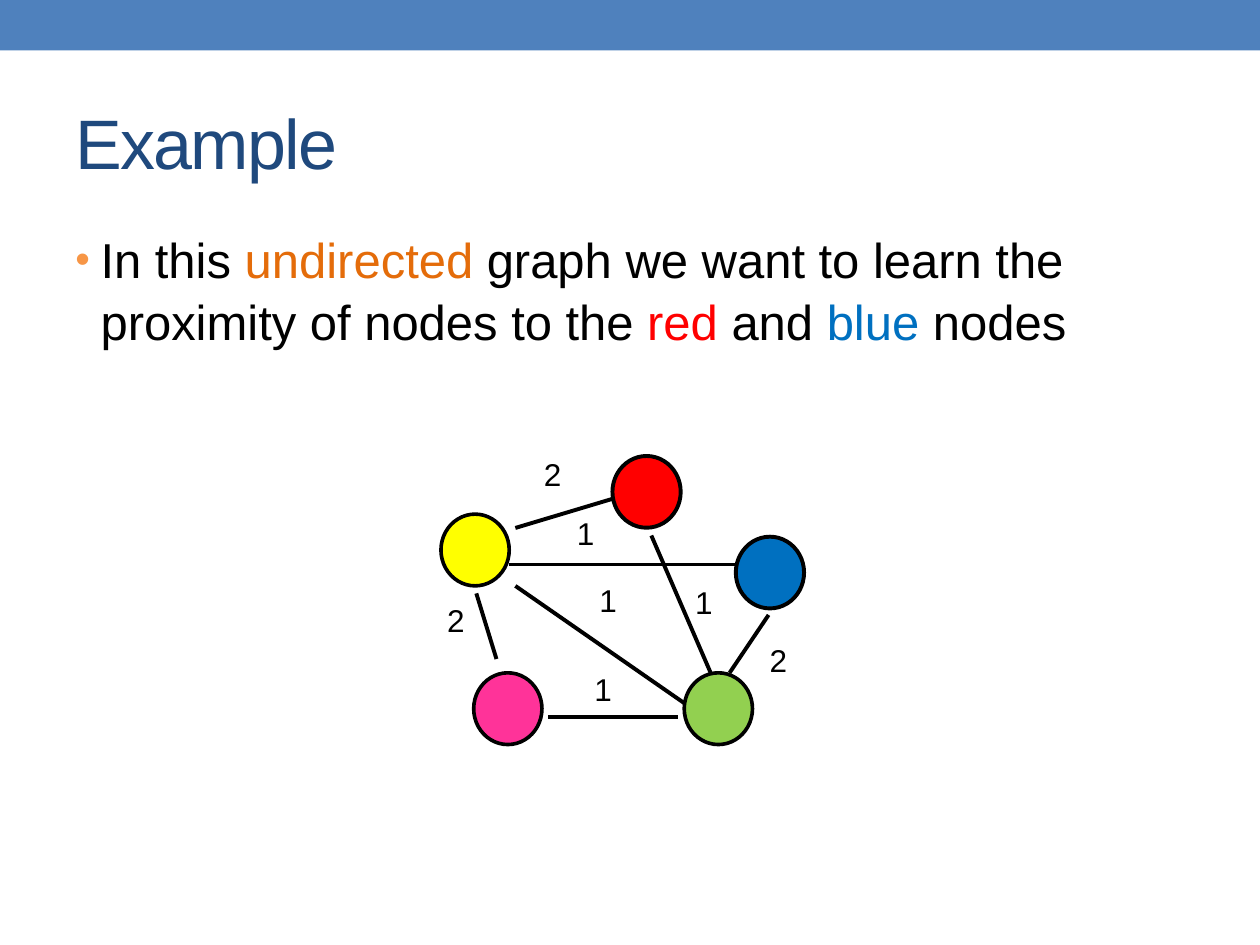
from lxml.etree import SubElement
from pptx import Presentation
from pptx.dml.color import RGBColor
from pptx.enum.shapes import MSO_CONNECTOR, MSO_SHAPE
from pptx.enum.text import MSO_ANCHOR, PP_ALIGN
from pptx.oxml.ns import qn
from pptx.util import Pt

BLACK = RGBColor(0, 0, 0)
BAR = RGBColor(0x4F, 0x81, 0xBD)
NAVY = RGBColor(0x1F, 0x49, 0x7D)
ORANGE = RGBColor(0xE4, 0x6C, 0x0A)
RED = RGBColor(0xFF, 0, 0)
BLUE = RGBColor(0, 0x70, 0xC0)
GREEN = RGBColor(0x92, 0xD0, 0x50)
PINK = RGBColor(0xFF, 0x33, 0x99)
YELLOW = RGBColor(0xFF, 0xFF, 0)

TITLE = [("Example", NAVY)]
BODY = [
    ("In this ", BLACK),
    ("undirected", ORANGE),
    (" graph we want to learn the proximity of nodes to the ", BLACK),
    ("red", RED),
    (" and ", BLACK),
    ("blue", BLUE),
    (" nodes", BLACK),
]
NODES = [
    (350, 260.6, RED, 2.25),
    (420.5, 306.7, BLUE, 2.25),
    (391, 384.5, GREEN, 2.08),
    (270.7, 384.5, PINK, 2.08),
    (252, 293.8, YELLOW, 2.08),
]
NODE_W, NODE_H = 39, 41
EDGES = [
    (313.2, 409.7, 387.4, 409.7),
    (283.7, 376.6, 272.2, 339.1),
    (294.5, 301.7, 349.9, 285.1),
    (290.9, 322.6, 420.5, 322.6),
    (406.1, 384.5, 372.2, 306),
    (416.9, 384.5, 439.2, 351.4),
    (391, 401.8, 294.5, 334.8),
]
COSTS = [
    ("2", 303.8, 256.3),
    ("2", 248.4, 339.8),
    ("1", 322.6, 290.2),
    ("1", 335.5, 328.3),
    ("1", 332.6, 379.4),
    ("2", 432.7, 362.9),
    ("1", 390.2, 329.8),
]
COST_W, COST_H = 24.5, 28.8

deck = Presentation()
deck.slide_width, deck.slide_height = Pt(720), Pt(540)
slide = deck.slides.add_slide(deck.slide_layouts[6])
shapes = slide.shapes


def add_text(runs, box, size, wrap=True):
    frame = shapes.add_textbox(*map(Pt, box)).text_frame
    frame.word_wrap = wrap
    para = frame.paragraphs[0]
    for text, color in runs:
        run = para.add_run()
        run.text = text
        run.font.name = "Arial"
        run.font.size = Pt(size)
        run.font.color.rgb = color
    return frame, para


def add_form(kind, box, fill):
    form = shapes.add_shape(kind, *map(Pt, box))
    form.shadow.inherit = False
    form.fill.solid()
    form.fill.fore_color.rgb = fill
    return form


def add_bullet(para, sign, color, scale):
    props = para._p.get_or_add_pPr()
    props.set("marL", str(Pt(14.4)))
    props.set("indent", str(-Pt(14.4)))
    tint = SubElement(props, qn("a:buClr"))
    SubElement(tint, qn("a:srgbClr"), val=color)
    SubElement(props, qn("a:buSzPct"), val=str(scale * 1000))
    SubElement(props, qn("a:buFont"), typeface="Arial")
    SubElement(props, qn("a:buChar"), char=sign)


add_form(MSO_SHAPE.RECTANGLE, (0, 0, 720, 28.8), BAR).line.fill.background()

frame, para = add_text(TITLE, (36, 42, 648, 78), 40)
frame.vertical_anchor = MSO_ANCHOR.MIDDLE
para.runs[0].font._element.set("spc", "-100")

frame, para = add_text(BODY, (36, 126, 648, 384), 28)
para.space_before = Pt(5.6)
para.line_spacing = 1.05
add_bullet(para, "•", "F79646", 85)

for x1, y1, x2, y2 in EDGES:
    edge = shapes.add_connector(MSO_CONNECTOR.STRAIGHT, Pt(x1), Pt(y1), Pt(x2), Pt(y2))
    edge.line.color.rgb = BLACK
    edge.line.width = Pt(2.25)
    SubElement(edge._element.spPr, qn("a:effectLst"))

for x, y, fill, width in NODES:
    node = add_form(MSO_SHAPE.OVAL, (x, y, NODE_W, NODE_H), fill)
    node.line.color.rgb = BLACK
    node.line.width = Pt(width)

for cost, x, y in COSTS:
    frame, para = add_text([(cost, BLACK)], (x, y, COST_W, COST_H), 18, False)
    para.alignment = PP_ALIGN.LEFT

deck.save("out.pptx")
